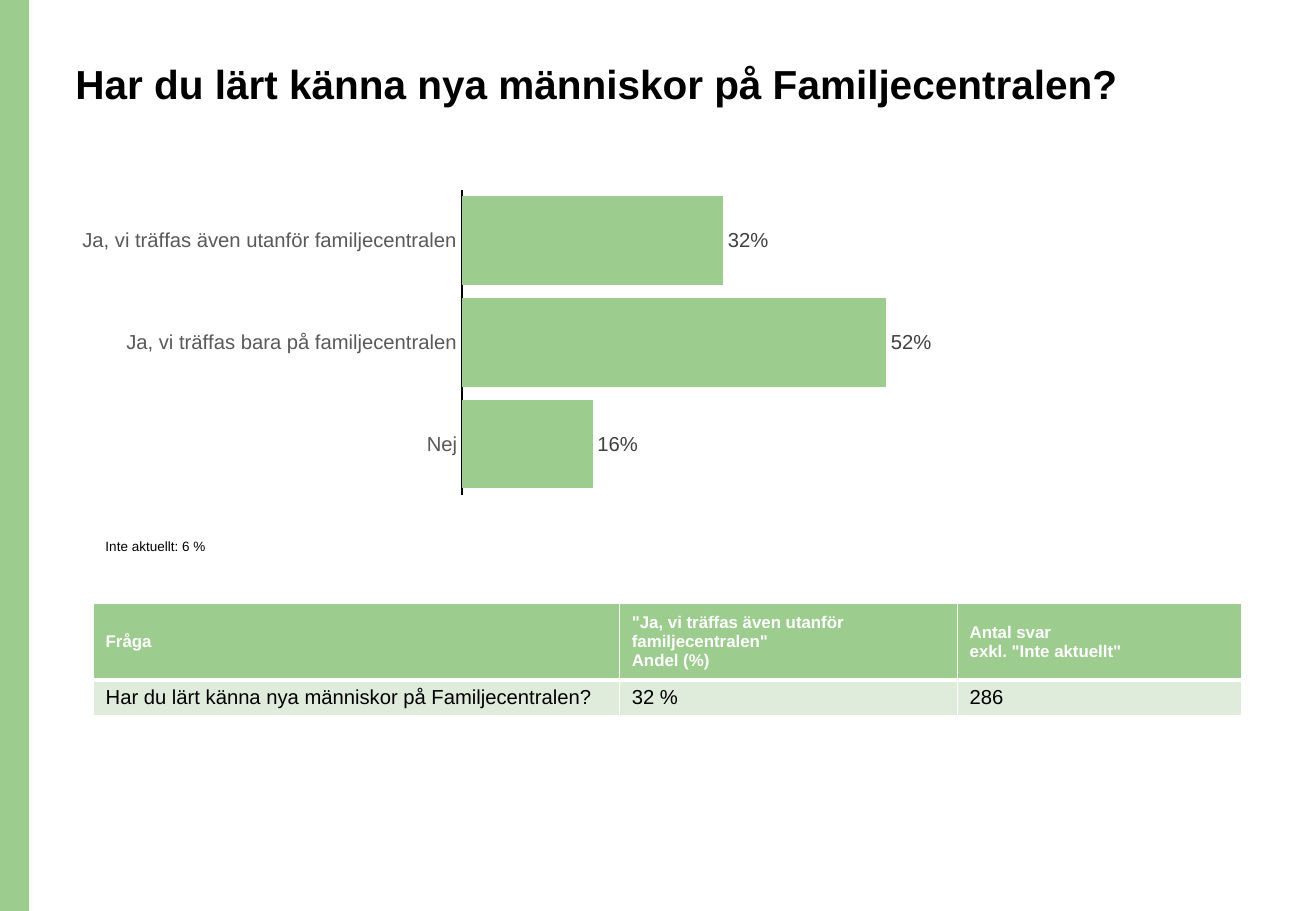
import dataclasses

import lxml.etree
import pptx
import pptx.chart.data
import pptx.dml.color
import pptx.enum.chart
import pptx.enum.shapes
import pptx.enum.text
import pptx.oxml.ns
import pptx.util

QUESTION = "Har du lärt känna nya människor på Familjecentralen?"
ANSWERS = {
    "Ja, vi träffas även utanför familjecentralen": 0.32,
    "Ja, vi träffas bara på familjecentralen": 0.52,
    "Nej": 0.16,
}
SUMMARY = [
    ["Fråga", '"Ja, vi träffas även utanför familjecentralen"\nAndel (%)',
     'Antal svar\nexkl. "Inte aktuellt"'],
    [QUESTION, "32 %", "286"],
]


@dataclasses.dataclass(frozen=True)
class Theme:
    font: str = "Arial"
    green: str = "9DCC8F"
    pale_green: str = "DFECDB"
    white: str = "FFFFFF"
    black: str = "000000"
    axis_text: str = "595959"
    label_text: str = "404040"
    title_size: int = 24
    body_size: int = 12
    header_size: int = 10
    note_size: int = 8


def px(length):
    """Convert px, 100 to the inch, into EMU."""
    return pptx.util.Emu(length * 9144)


def rgb(color):
    return pptx.dml.color.RGBColor.from_string(color)


def style_font(font, name, size, color, bold=False):
    font.name, font.size, font.bold = name, pptx.util.Pt(size), bold
    font.color.rgb = rgb(color)


def write_text(frame, text, *, font, size, color, bold=False, spacing=None):
    """Write each line of text as one formatted paragraph."""
    frame.text = text
    for paragraph in frame.paragraphs:
        paragraph.alignment = pptx.enum.text.PP_ALIGN.LEFT
        paragraph.line_spacing = spacing
        for run in paragraph.runs:
            style_font(run.font, font, size, color, bold)


def draw_cell_borders(cell, color, widths):
    """Draw the borders of a cell; widths are points by side."""
    properties = cell._tc.get_or_add_tcPr()
    for position, side in enumerate("LRTB"):
        line = lxml.etree.Element(
            pptx.oxml.ns.qn(f"a:ln{side}"), w=str(pptx.util.Pt(widths[side])))
        fill = lxml.etree.SubElement(line, pptx.oxml.ns.qn("a:solidFill"))
        lxml.etree.SubElement(fill, pptx.oxml.ns.qn("a:srgbClr"), val=color)
        properties.insert(position, line)


def place_plot(chart, **fractions):
    """Fix the inner plot area as fractions of the chart."""
    plot_area = chart._chartSpace.chart.plotArea
    for old in plot_area.findall(pptx.oxml.ns.qn("c:layout")):
        plot_area.remove(old)
    layout = lxml.etree.Element(pptx.oxml.ns.qn("c:layout"))
    manual = lxml.etree.SubElement(layout, pptx.oxml.ns.qn("c:manualLayout"))
    settings = {"layoutTarget": "inner", "xMode": "edge", "yMode": "edge", **fractions}
    for tag, value in settings.items():
        lxml.etree.SubElement(manual, pptx.oxml.ns.qn(f"c:{tag}"), val=str(value))
    plot_area.insert(0, layout)


class SurveySlide:
    def __init__(self, slide, theme):
        self.slide, self.theme = slide, theme

    def side_band(self, *box):
        band = self.slide.shapes.add_shape(
            pptx.enum.shapes.MSO_SHAPE.RECTANGLE, *map(px, box))
        band.shadow.inherit = False
        band.fill.solid()
        band.fill.fore_color.rgb = rgb(self.theme.green)
        band.line.fill.background()

    def title(self, text, *box):
        heading = self.slide.shapes.title
        heading.left, heading.top, heading.width, heading.height = map(px, box)
        frame = heading.text_frame
        frame.auto_size = pptx.enum.text.MSO_AUTO_SIZE.NONE
        frame.vertical_anchor = pptx.enum.text.MSO_ANCHOR.TOP
        write_text(frame, text, font=self.theme.font, size=self.theme.title_size,
                   color=self.theme.black, bold=True, spacing=0.9)

    def note(self, text, *box):
        frame = self.slide.shapes.add_textbox(*map(px, box)).text_frame
        frame.word_wrap = True
        frame.auto_size = pptx.enum.text.MSO_AUTO_SIZE.SHAPE_TO_FIT_TEXT
        write_text(frame, text, font=self.theme.font, size=self.theme.note_size,
                   color=self.theme.black, spacing=1.5)

    def bar_chart(self, answers, *box):
        theme = self.theme
        shares = pptx.chart.data.CategoryChartData(number_format="0%")
        shares.categories = list(answers)
        shares.add_series("Series 1", list(answers.values()))
        chart = self.slide.shapes.add_chart(
            pptx.enum.chart.XL_CHART_TYPE.BAR_CLUSTERED, *map(px, box), shares).chart
        chart.has_legend = chart.has_title = False
        style_font(chart.font, theme.font, theme.header_size, theme.black)
        place_plot(chart, x=0.44, y=0.02, w=0.54, h=0.96)

        # Axes
        answer_axis, share_axis = chart.category_axis, chart.value_axis
        answer_axis.reverse_order = True
        answer_axis.major_tick_mark = pptx.enum.chart.XL_TICK_MARK.NONE
        answer_axis.format.line.color.rgb = rgb(theme.black)
        answer_axis.format.line.width = pptx.util.Pt(0.75)
        style_font(answer_axis.tick_labels.font, theme.font, theme.body_size,
                   theme.axis_text)
        share_axis.minimum_scale, share_axis.maximum_scale = 0, 0.6
        share_axis.has_major_gridlines = False
        share_axis.visible = False

        # Bars and their labels
        plot = chart.plots[0]
        plot.gap_width, plot.vary_by_categories = 15, False
        bars = plot.series[0]
        bars.format.fill.solid()
        bars.format.fill.fore_color.rgb = rgb(theme.green)
        labels = bars.data_labels
        labels.show_value = True
        labels.number_format, labels.number_format_is_linked = "0%", False
        labels.position = pptx.enum.chart.XL_LABEL_POSITION.OUTSIDE_END
        style_font(labels.font, theme.font, theme.body_size, theme.label_text)

    def table(self, rows, left, top, widths, heights):
        theme = self.theme
        grid = self.slide.shapes.add_table(
            len(rows), len(widths), px(left), px(top),
            px(sum(widths)), px(sum(heights))).table
        for column, width in zip(grid.columns, widths):
            column.width = px(width)
        for index, (row, texts, height) in enumerate(zip(grid.rows, rows, heights)):
            row.height = px(height)
            header = index == 0
            borders = {"L": 1, "R": 1, "T": 1 if header else 3, "B": 3 if header else 1}
            for cell, text in zip(row.cells, texts):
                cell.vertical_anchor = pptx.enum.text.MSO_ANCHOR.MIDDLE
                cell.fill.solid()
                cell.fill.fore_color.rgb = rgb(theme.green if header else theme.pale_green)
                draw_cell_borders(cell, theme.white, borders)
                write_text(cell.text_frame, text, font=theme.font, bold=header,
                           size=theme.header_size if header else theme.body_size,
                           color=theme.white if header else theme.black)


def main():
    deck = pptx.Presentation()
    deck.slide_width, deck.slide_height = px(1083), px(750)
    survey = SurveySlide(deck.slides.add_slide(deck.slide_layouts[5]), Theme())

    # Heading
    survey.side_band(0, 0, 24, 750)
    survey.title(QUESTION, 52, 48, 934, 102)

    # Results
    survey.table(SUMMARY, 77, 497, widths=[433, 278, 234], heights=[63, 29])
    survey.note("Inte aktuellt: 6 %", 77, 431, 210, 28)
    survey.bar_chart(ANSWERS, 52, 151, 746, 262)

    deck.save("out.pptx")


if __name__ == "__main__":
    main()
